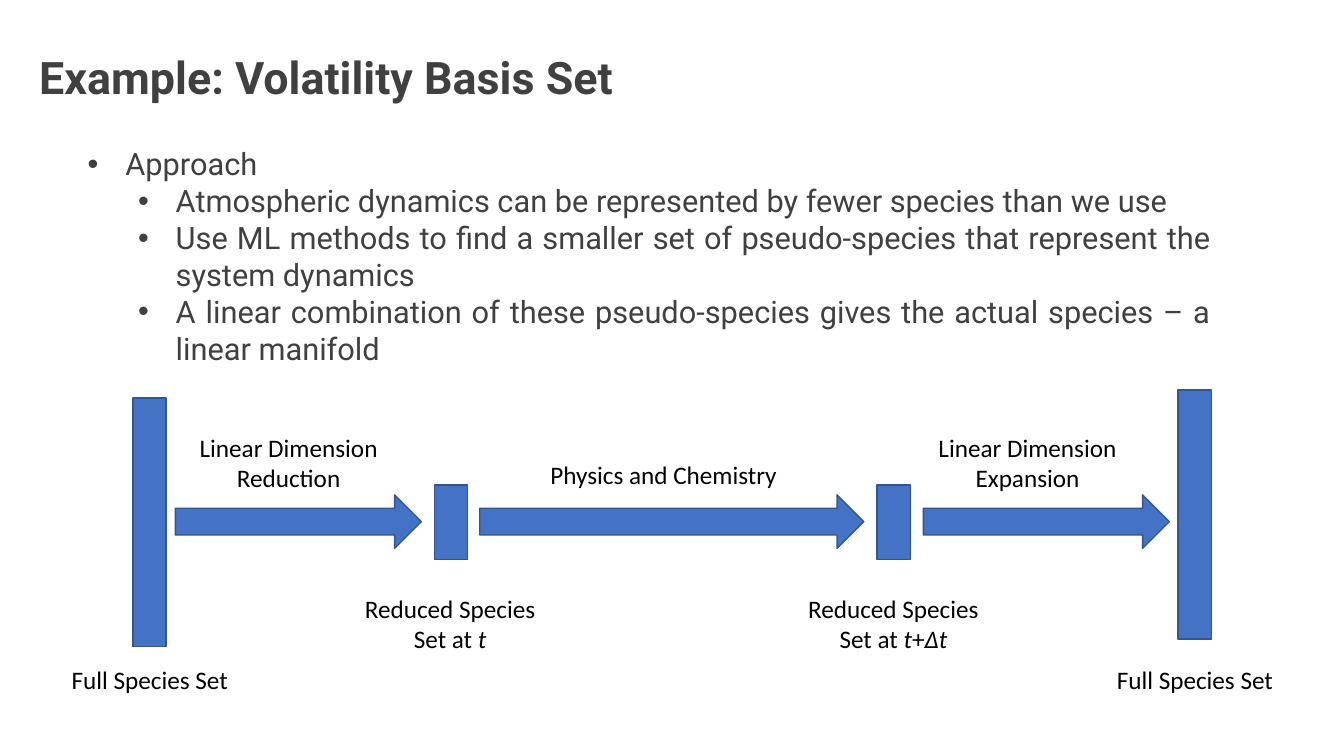
from lxml.etree import SubElement
from pptx import Presentation
from pptx.dml.color import RGBColor
from pptx.enum.shapes import MSO_SHAPE as Kind
from pptx.enum.text import PP_ALIGN as Align
from pptx.oxml.ns import qn
from pptx.util import Cm, Pt

GREY, BLACK = "404040", "000000"
BLUE, EDGE = "4472C4", "325491"


def tint(code):
    return RGBColor.from_string(code)


def add_run(para, text, face, size, color, bold=False, slant=False):
    run = para.add_run()
    run.text = text
    font = run.font
    font.name, font.size = face, Pt(size)
    font.bold, font.italic = bold, slant
    font.color.rgb = tint(color)


def add_box(slide, left, top, width, height, wrap=True):
    box = slide.shapes.add_textbox(Cm(left), Cm(top), Cm(width), Cm(height))
    box.text_frame.word_wrap = wrap
    return box.text_frame


def add_title(slide, text):
    para = add_box(slide, 0.74, 1.12, 32.08, 1.63).paragraphs[0]
    add_run(para, text, "Roboto", 32, GREY, bold=True)


def set_bullet(para, level):
    para.level = level
    props = para._p.get_or_add_pPr()
    hang = Cm(0.95)
    props.set("marL", str(hang + level * Cm(1.27)))
    props.set("indent", str(-hang))
    SubElement(props, qn("a:buFont")).set("typeface", "Arial")
    SubElement(props, qn("a:buChar")).set("char", "•")


def add_list(slide, items):
    frame = add_box(slide, 1.96, 3.53, 28.8, 5.89)
    for num, (level, text) in enumerate(items):
        para = frame.add_paragraph() if num else frame.paragraphs[0]
        para.alignment = Align.JUSTIFY
        set_bullet(para, level)
        add_run(para, text, "Roboto", 22, GREY)


def add_block(slide, kind, left, top, width, height):
    block = slide.shapes.add_shape(kind, Cm(left), Cm(top), Cm(width), Cm(height))
    block.shadow.inherit = False
    block.fill.solid()
    block.fill.fore_color.rgb = tint(BLUE)
    block.line.color.rgb = tint(EDGE)
    block.line.width = Pt(1)


def add_bar(slide, left, top, height):
    add_block(slide, Kind.RECTANGLE, left, top, 0.84, height)


def add_arrow(slide, left, width):
    add_block(slide, Kind.RIGHT_ARROW, left, 12.47, width, 1.35)


def add_label(slide, left, top, parts, width=5.21, height=1.8, wrap=True):
    """Centred caption; parts alternate between upright and italic text."""
    para = add_box(slide, left, top, width, height, wrap).paragraphs[0]
    para.alignment = Align.CENTER
    for num, text in enumerate(parts):
        add_run(para, text, "Calibri", 18, BLACK, slant=num % 2 == 1)


def add_flow(slide):
    for left, top, height in [(3.35, 10.03, 6.27), (10.95, 12.22, 1.88),
                              (22.1, 12.22, 1.88), (29.69, 9.83, 6.27)]:
        add_bar(slide, left, top, height)
    for left, width in [(4.42, 6.2), (12.09, 9.68), (23.27, 6.2)]:
        add_arrow(slide, left, width)

    add_label(slide, 13.59, 11.46, ["Physics and Chemistry"], 6.27, 1.02, wrap=False)
    for left, word in [(4.67, "Reduction"), (23.29, "Expansion")]:
        add_label(slide, left, 10.77, ["Linear Dimension " + word])
    for left in (1.17, 27.51):
        add_label(slide, left, 16.61, ["Full Species Set"], height=1.02)
    for left, time in [(8.74, ["t"]), (19.91, ["t", "+", "Δt"])]:
        add_label(slide, left, 14.82, ["Reduced Species Set at "] + time)


def main():
    deck = Presentation()
    deck.slide_width, deck.slide_height = Cm(33.87), Cm(19.05)
    slide = deck.slides.add_slide(deck.slide_layouts[6])
    add_title(slide, "Example: Volatility Basis Set")
    add_list(slide, [
        (0, "Approach"),
        (1, "Atmospheric dynamics can be represented by fewer species than we use"),
        (1, "Use ML methods to find a smaller set of pseudo-species "
            "that represent the system dynamics"),
        (1, "A linear combination of these pseudo-species gives "
            "the actual species – a linear manifold"),
    ])
    add_flow(slide)
    deck.save("out.pptx")


if __name__ == "__main__":
    main()
